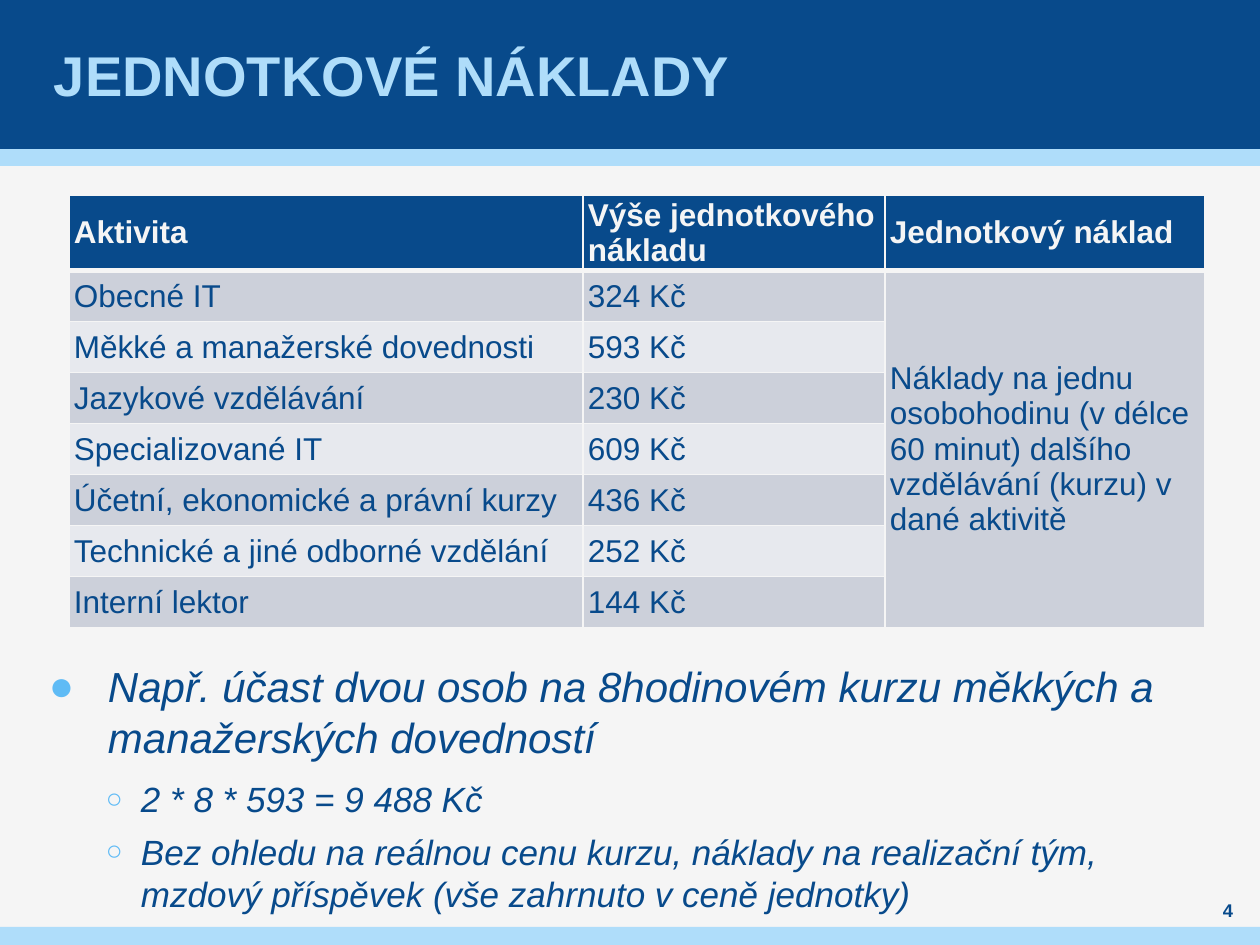
from typing import NamedTuple

from lxml.etree import SubElement
from pptx import Presentation
from pptx.dml.color import RGBColor
from pptx.enum.shapes import MSO_SHAPE
from pptx.enum.text import MSO_ANCHOR, PP_ALIGN
from pptx.oxml.ns import qn
from pptx.util import Emu, Pt

FONT = "Arial"
COLORS = {
    "navy": "084A8B",
    "sky": "AFDDFA",
    "bullet": "5FBBF5",
    "paper": "F5F5F5",
    "dark_row": "CCD0DA",
    "light_row": "E7E9EE",
}


class Box(NamedTuple):
    left: int
    top: int
    width: int
    height: int


class Bar(NamedTuple):
    box: Box
    color: str


class TextStyle(NamedTuple):
    size: float
    color: str
    bold: bool = False
    italic: bool = False


class BulletLevel(NamedTuple):
    level: int
    symbol: str
    symbol_percent: int
    margin: int
    hanging: int
    line_points: float
    gap_points: int
    style: TextStyle


BARS = [
    Bar(Box(0, 149, 1260, 17), "sky"),
    Bar(Box(0, 0, 1260, 149), "navy"),
    Bar(Box(0, 927, 1260, 18), "sky"),
]

HEADERS = ["Aktivita", "Výše jednotkového nákladu", "Jednotkový náklad"]
UNIT_COSTS = [
    ("Obecné IT", "324 Kč"),
    ("Měkké a manažerské dovednosti", "593 Kč"),
    ("Jazykové vzdělávání", "230 Kč"),
    ("Specializované IT", "609 Kč"),
    ("Účetní, ekonomické a právní kurzy", "436 Kč"),
    ("Technické a jiné odborné vzdělání", "252 Kč"),
    ("Interní lektor", "144 Kč"),
]
UNIT_DEFINITION = (
    "Náklady na jednu osobohodinu (v délce 60 minut) "
    "dalšího vzdělávání (kurzu) v dané aktivitě"
)
COLUMN_WIDTHS = [514, 302, 320]
HEADER_HEIGHT, ROW_HEIGHT = 70, 51

MAIN = BulletLevel(0, "●", 100, 59, 59, 28.8, 6, TextStyle(24, "navy", italic=True))
DETAIL = BulletLevel(1, "○", 80, 92, 35, 24, 3, TextStyle(20, "navy", italic=True))
EXAMPLE = [
    (MAIN, "Např. účast dvou osob na 8hodinovém kurzu měkkých a manažerských dovedností"),
    (DETAIL, "2 * 8 * 593 = 9 488 Kč"),
    (DETAIL, "Bez ohledu na reálnou cenu kurzu, náklady na realizační tým, "
             "mzdový příspěvek (vše zahrnuto v ceně jednotky)"),
]


def px(value: int) -> Emu:
    return Emu(round(value * 914400 / 126))


def place(box: Box) -> list[Emu]:
    return [px(value) for value in box]


def color(name: str) -> RGBColor:
    return RGBColor.from_string(COLORS[name])


def format_runs(paragraph, style: TextStyle) -> None:
    for run in paragraph.runs:
        font = run.font
        font.name, font.size = FONT, Pt(style.size)
        font.bold, font.italic = style.bold, style.italic
        font.color.rgb = color(style.color)


def add_bar(slide, bar: Bar) -> None:
    shape = slide.shapes.add_shape(MSO_SHAPE.RECTANGLE, *place(bar.box))
    shape.shadow.inherit = False
    shape.fill.solid()
    shape.fill.fore_color.rgb = color(bar.color)
    shape.line.fill.background()


def add_text_frame(slide, box: Box, anchor: MSO_ANCHOR, side_margin: int = 0):
    text_frame = slide.shapes.add_textbox(*place(box)).text_frame
    text_frame.word_wrap = True
    text_frame.vertical_anchor = anchor
    text_frame.margin_left = text_frame.margin_right = px(side_margin)
    text_frame.margin_top = text_frame.margin_bottom = 0
    return text_frame


def add_label(slide, box: Box, text: str, style: TextStyle,
              alignment: PP_ALIGN = PP_ALIGN.LEFT, side_margin: int = 0) -> None:
    text_frame = add_text_frame(slide, box, MSO_ANCHOR.MIDDLE, side_margin)
    text_frame.text = text
    paragraph = text_frame.paragraphs[0]
    paragraph.alignment = alignment
    format_runs(paragraph, style)


def style_cell(cell, row: int) -> None:
    # Borders come before the fill; the line under the header is thicker
    properties = cell._tc.get_or_add_tcPr()
    widths = {"lnL": 1, "lnR": 1, "lnT": 3 if row == 1 else 1, "lnB": 3 if row == 0 else 1}
    for tag, points in widths.items():
        line = SubElement(properties, qn(f"a:{tag}"), w=str(Pt(points)))
        SubElement(SubElement(line, qn("a:solidFill")), qn("a:srgbClr"), val=COLORS["paper"])
    fill_name = "navy" if row == 0 else "dark_row" if row % 2 else "light_row"
    cell.fill.solid()
    cell.fill.fore_color.rgb = color(fill_name)
    cell.vertical_anchor = MSO_ANCHOR.MIDDLE
    cell.margin_left = px(5)
    cell.margin_right = cell.margin_top = cell.margin_bottom = 0
    style = TextStyle(18, "paper", bold=True) if row == 0 else TextStyle(18, "navy")
    format_runs(cell.text_frame.paragraphs[0], style)


def add_cost_table(slide, left: int, top: int) -> None:
    heights = [HEADER_HEIGHT] + [ROW_HEIGHT] * len(UNIT_COSTS)
    box = Box(left, top, sum(COLUMN_WIDTHS), sum(heights))
    table = slide.shapes.add_table(len(heights), len(HEADERS), *place(box)).table
    for column, width in zip(table.columns, COLUMN_WIDTHS):
        column.width = px(width)
    for row, height in zip(table.rows, heights):
        row.height = px(height)
    for row_index, texts in enumerate([HEADERS, *UNIT_COSTS]):
        for column_index, text in enumerate(texts):
            table.cell(row_index, column_index).text = text
    table.cell(1, 2).text = UNIT_DEFINITION
    for row_index in range(len(heights)):
        for column_index in range(len(HEADERS)):
            style_cell(table.cell(row_index, column_index), row_index)
    table.cell(1, 2).merge(table.cell(len(UNIT_COSTS), 2))


def format_bullet(paragraph, bullet: BulletLevel, is_first: bool) -> None:
    properties = paragraph._p.get_or_add_pPr()
    properties.set("marL", str(px(bullet.margin)))
    properties.set("indent", str(-px(bullet.hanging)))
    paragraph.level = bullet.level
    paragraph.line_spacing = Pt(bullet.line_points)
    paragraph.space_before = Pt(0 if is_first else bullet.gap_points)
    paragraph.space_after = Pt(bullet.gap_points)
    bullet_color = SubElement(properties, qn("a:buClr"))
    SubElement(bullet_color, qn("a:srgbClr"), val=COLORS["bullet"])
    SubElement(properties, qn("a:buSzPct"), val=str(bullet.symbol_percent * 1000))
    SubElement(properties, qn("a:buFont"), typeface=FONT)
    SubElement(properties, qn("a:buChar"), char=bullet.symbol)
    format_runs(paragraph, bullet.style)


def add_example(slide, box: Box) -> None:
    text_frame = add_text_frame(slide, box, MSO_ANCHOR.TOP)
    for index, (bullet, text) in enumerate(EXAMPLE):
        paragraph = text_frame.add_paragraph() if index else text_frame.paragraphs[0]
        paragraph.text = text
        format_bullet(paragraph, bullet, index == 0)


def main() -> None:
    presentation = Presentation()
    presentation.slide_width, presentation.slide_height = px(1260), px(945)
    slide = presentation.slides.add_slide(presentation.slide_layouts[6])
    slide.background.fill.solid()
    slide.background.fill.fore_color.rgb = color("paper")

    # Header and footer bars
    for bar in BARS:
        add_bar(slide, bar)

    # Title
    add_label(slide, Box(49, 0, 1160, 149), "JEDNOTKOVÉ NÁKLADY",
              TextStyle(32, "sky", bold=True), side_margin=5)

    # Unit costs and a worked example
    add_cost_table(slide, 69, 195)
    add_example(slide, Box(49, 661, 1133, 266))

    # Page number
    add_label(slide, Box(1196, 898, 64, 25), "4",
              TextStyle(10.5, "navy", bold=True), PP_ALIGN.CENTER)
    presentation.save("out.pptx")


if __name__ == "__main__":
    main()
